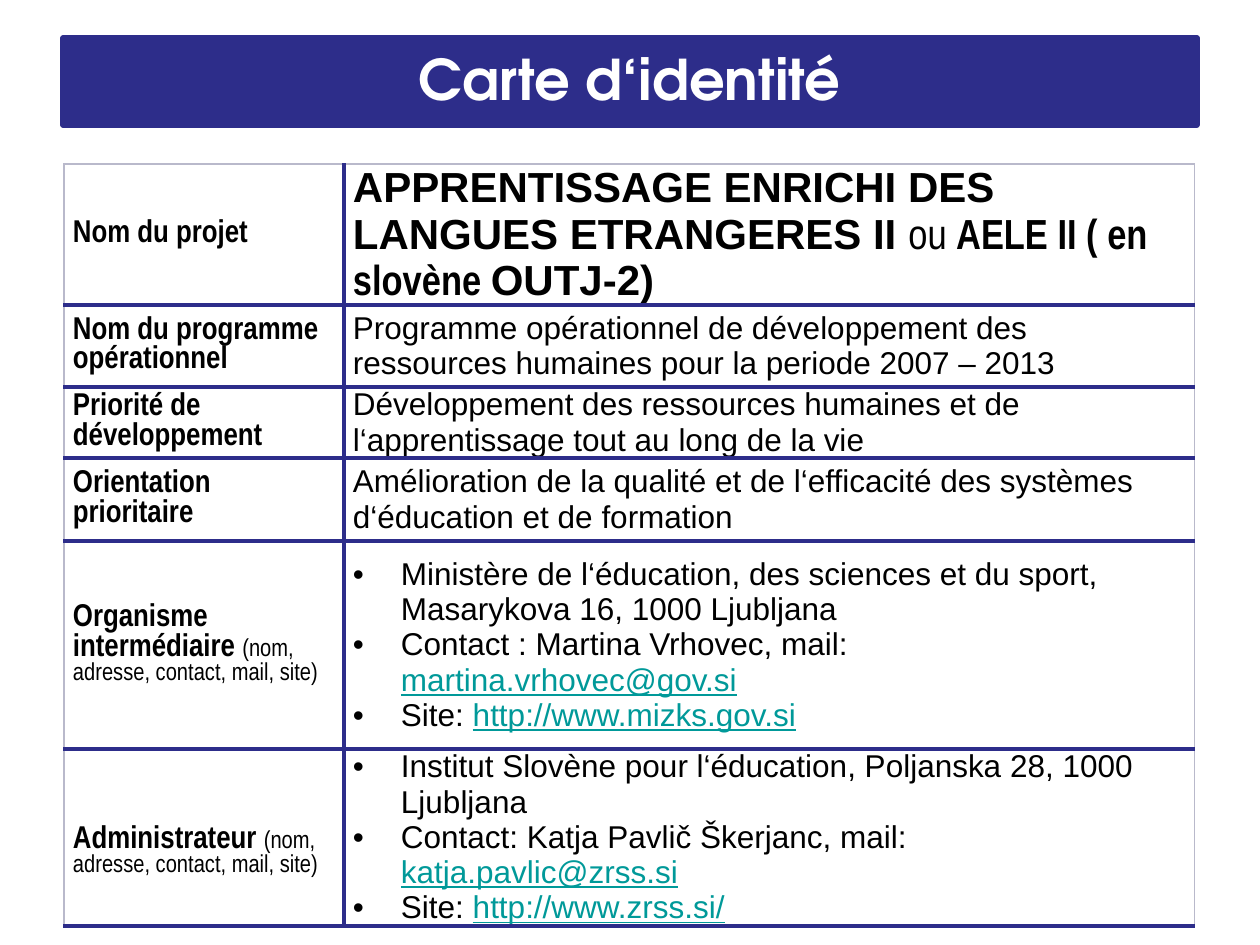
from dataclasses import dataclass
from itertools import accumulate

from lxml import etree
from pptx import Presentation
from pptx.dml.color import RGBColor
from pptx.enum.shapes import MSO_SHAPE
from pptx.enum.text import MSO_ANCHOR, PP_ALIGN
from pptx.oxml.ns import qn
from pptx.util import Pt

RECTANGLE = MSO_SHAPE.RECTANGLE
MIDDLE = MSO_ANCHOR.MIDDLE
CENTER = PP_ALIGN.CENTER
EMU_PER_PX = 914400 // 126
NAVY, GREY, WHITE, BLACK, TEAL = "2D2D8A", "B9B9CB", "FFFFFF", "000000", "009999"
TITLE_FONT, BODY_FONT, LABEL_FONT = "TeX Gyre Adventor", "Arial", "Arial Narrow"
COLUMN_WIDTHS = [280, 851]
ROW_HEIGHTS = [141, 82, 71, 83, 208, 177]
BULLET_INDENT = 48


@dataclass(frozen=True)
class TextRun:
    """A piece of text with its own look."""

    text: str
    size: int = 18
    font: str = BODY_FONT
    bold: bool = False
    color: str = BLACK
    underline: bool = False


@dataclass(frozen=True)
class IdentityRow:
    """A label cell and the paragraphs of its content cell."""

    label: list[TextRun]
    content: list[list[TextRun]]
    bulleted: bool = False
    label_top: int = 0


def label(text: str) -> TextRun:
    """Return a bold narrow row label."""
    return TextRun(text, font=LABEL_FONT, bold=True)


def address(text: str) -> TextRun:
    """Return an underlined mail or web address."""
    return TextRun(text, color=TEAL, underline=True)


DETAILS = TextRun("(nom, adresse, contact, mail, site)", 14, LABEL_FONT)
IDENTITY_ROWS = [
    IdentityRow([label("Nom du projet")], [[
        TextRun("APPRENTISSAGE ENRICHI DES LANGUES ETRANGERES II ", 24, bold=True),
        TextRun("ou ", 24, LABEL_FONT),
        TextRun("AELE II ( en slovène ", 24, LABEL_FONT, True),
        TextRun("OUTJ-2)", 24, bold=True)]]),
    IdentityRow([label("Nom du programme opérationnel")], [[TextRun(
        "Programme opérationnel de développement des ressources humaines "
        "pour la periode 2007 – 2013")]]),
    IdentityRow([label("Priorité de développement")], [[TextRun(
        "Développement des ressources humaines et de l‘apprentissage "
        "tout au long de la vie")]]),
    IdentityRow([label("Orientation prioritaire")], [[TextRun(
        "Amélioration de la qualité et de l‘efficacité des systèmes "
        "d‘éducation et de formation")]]),
    IdentityRow([label("Organisme intermédiaire "), DETAILS], [
        [TextRun("Ministère de l‘éducation, des sciences et du sport, "
                 "Masarykova 16, 1000 Ljubljana")],
        [TextRun("Contact : Martina Vrhovec, mail: "), address("martina.vrhovec@gov.si")],
        [TextRun("Site: "), address("http://www.mizks.gov.si")]], bulleted=True),
    IdentityRow([label("Administrateur "), DETAILS], [
        [TextRun("Institut Slovène pour l‘éducation, Poljanska 28, 1000 Ljubljana")],
        [TextRun("Contact: Katja Pavlič Škerjanc, mail: "), address("katja.pavlic@zrss.si")],
        [TextRun("Site: "), address("http://www.zrss.si/")]], bulleted=True, label_top=29),
]


def px(length: int) -> int:
    """Turn px into EMU."""
    return length * EMU_PER_PX


def rgb(value: str) -> RGBColor:
    """Turn a hex string into a colour."""
    return RGBColor.from_string(value)


def add_runs(paragraph, runs: list[TextRun]) -> None:
    """Add the runs to a paragraph."""
    for item in runs:
        run = paragraph.add_run()
        run.text = item.text
        font = run.font
        font.name, font.size = item.font, Pt(item.size)
        font.bold, font.underline = item.bold, item.underline
        font.color.rgb = rgb(item.color)


def add_bullet(paragraph) -> None:
    """Give a paragraph a hanging bullet."""
    properties = paragraph._p.get_or_add_pPr()
    properties.set("marL", str(px(BULLET_INDENT)))
    properties.set("indent", str(-px(BULLET_INDENT)))
    etree.SubElement(properties, qn("a:buFont"), typeface=BODY_FONT)
    etree.SubElement(properties, qn("a:buChar"), char="•")


def add_borders(cell, navy_sides: str) -> None:
    """Draw the named sides in thick navy and the others in thin grey."""
    properties = cell._tc.get_or_add_tcPr()
    for side in "LRTB":
        color, width = (NAVY, 2.25) if side in navy_sides else (GREY, 0.75)
        line = etree.SubElement(properties, qn(f"a:ln{side}"), w=str(Pt(width)))
        fill = etree.SubElement(line, qn("a:solidFill"))
        etree.SubElement(fill, qn("a:srgbClr"), val=color)


def fill_cell(cell, paragraphs: list[list[TextRun]], navy_sides: str,
              bulleted: bool = False, top: int = 0) -> None:
    """Write and style one table cell."""
    add_borders(cell, navy_sides)
    cell.fill.solid()
    cell.fill.fore_color.rgb = rgb(WHITE)
    cell.vertical_anchor = MIDDLE
    cell.margin_left = cell.margin_right = px(9)
    cell.margin_top, cell.margin_bottom = px(top), 0
    for index, runs in enumerate(paragraphs):
        frame = cell.text_frame
        paragraph = frame.add_paragraph() if index else frame.paragraphs[0]
        if bulleted:
            add_bullet(paragraph)
        add_runs(paragraph, runs)


def add_title(slide) -> None:
    """Add the title banner."""
    shape = slide.shapes.add_shape(RECTANGLE, px(63), px(38), px(1134), px(87))
    shape.shadow.inherit = False
    shape.fill.solid()
    shape.fill.fore_color.rgb = rgb(NAVY)
    shape.line.color.rgb = rgb(NAVY)
    shape.line.width = Pt(3)
    frame = shape.text_frame
    frame.word_wrap = True
    frame.vertical_anchor = MIDDLE
    paragraph = frame.paragraphs[0]
    paragraph.alignment = CENTER
    paragraph.line_spacing = Pt(35)
    add_runs(paragraph, [TextRun("Carte d‘identité", 32, TITLE_FONT, True, WHITE)])


def add_identity_table(slide) -> None:
    """Add the project identity table."""
    *_, width = accumulate(COLUMN_WIDTHS)
    *_, height = accumulate(ROW_HEIGHTS)
    table = slide.shapes.add_table(
        len(IDENTITY_ROWS), len(COLUMN_WIDTHS),
        px(64), px(164), px(width), px(height)).table
    table.first_row = table.horz_banding = False
    for column, column_width in zip(table.columns, COLUMN_WIDTHS):
        column.width = px(column_width)
    for index, (item, row_height) in enumerate(zip(IDENTITY_ROWS, ROW_HEIGHTS)):
        table.rows[index].height = px(row_height)
        sides = "TB" if index else "B"
        fill_cell(table.cell(index, 0), [item.label], sides + "R", top=item.label_top)
        fill_cell(table.cell(index, 1), item.content, sides + "L", item.bulleted)


def main() -> None:
    """Build and save the slide."""
    presentation = Presentation()
    presentation.slide_width, presentation.slide_height = px(1260), px(945)
    slide = presentation.slides.add_slide(presentation.slide_layouts[6])
    add_title(slide)
    add_identity_table(slide)
    presentation.save("out.pptx")


if __name__ == "__main__":
    main()
